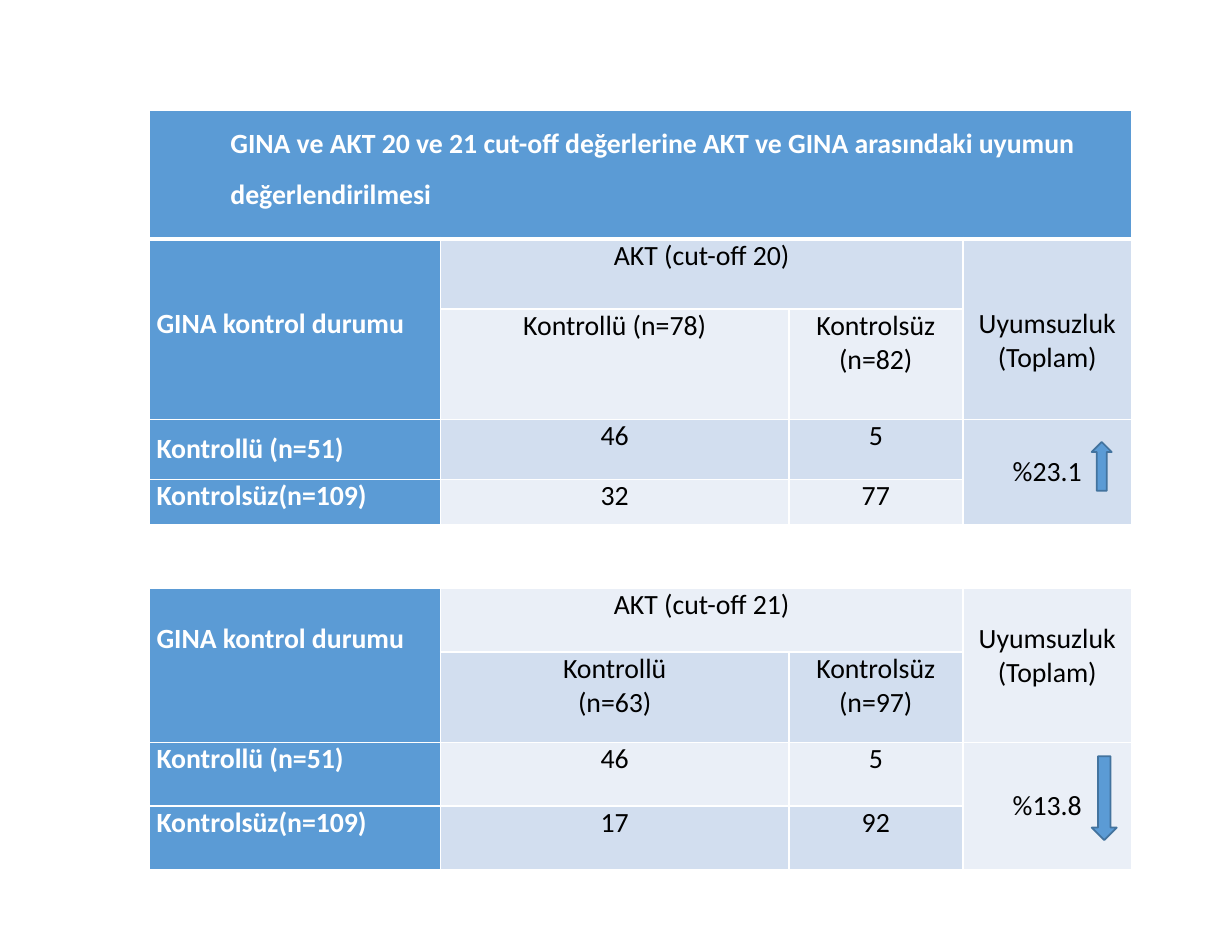
from dataclasses import dataclass

from lxml.etree import SubElement
from pptx import Presentation
from pptx.dml.color import RGBColor
from pptx.enum.shapes import MSO_SHAPE as Preset
from pptx.enum.text import MSO_ANCHOR as Anchor, PP_ALIGN as Align
from pptx.oxml.ns import qn
from pptx.util import Emu, Pt

PX = 9144
BLUE, EDGE, WHITE, BLACK = "5B9BD5", "43739E", "FFFFFF", "000000"
BANDS = ("EAEFF7", "D2DEEF")
COLUMNS = (233, 278, 139, 135)
ROWS = (103, 56, 88, 48, 36, 51, 51, 72, 51, 51)
GAP_ROW = 5
BLANK_LINE = 27


@dataclass(frozen=True)
class Entry:
    row: int
    column: int
    text: str
    rows: int = 1
    columns: int = 1
    top: int = 0
    middle: bool = False


@dataclass(frozen=True)
class Section:
    row: int
    cutoff: int
    controlled: str
    uncontrolled: str
    values: tuple[tuple[str, str], tuple[str, str]]
    mismatch: str
    blank_lines: int
    middle: bool


@dataclass(frozen=True)
class Arrow:
    preset: Preset
    left: int
    top: int
    width: int
    height: int


SECTIONS = (
    Section(1, 20, "Kontrollü (n=78)", "Kontrolsüz\n(n=82)",
            (("46", "5"), ("32", "77")), "%23.1", 2, True),
    Section(6, 21, "Kontrollü\n(n=63)", "Kontrolsüz\n(n=97)",
            (("46", "5"), ("17", "92")), "%13.8", 1, False),
)
ARROWS = (
    Arrow(Preset.DOWN_ARROW, 872, 604, 20, 67),
    Arrow(Preset.UP_ARROW, 872, 353, 16, 39),
)


def px(length: int) -> Emu:
    return Emu(length * PX)


def color(value: str) -> RGBColor:
    return RGBColor.from_string(value)


def write(frame, text: str, *, ink: str, bold: bool = False,
          align: Align = Align.LEFT, spacing: float = 1.0) -> None:
    for index, line in enumerate(text.split("\n")):
        paragraph = frame.add_paragraph() if index else frame.paragraphs[0]
        paragraph.alignment = align
        paragraph.line_spacing = spacing
        run = paragraph.add_run()
        run.text = line
        run.font.name = "Calibri"
        run.font.size = Pt(16)
        run.font.bold = bold
        run.font.color.rgb = color(ink)


def set_borders(cell, top: int, bottom: int) -> None:
    properties = cell._tc.get_or_add_tcPr()
    widths = (("lnL", 1), ("lnR", 1), ("lnT", top), ("lnB", bottom))
    for name, width in widths:
        line = SubElement(properties, qn(f"a:{name}"), w=str(Pt(width)))
        fill = SubElement(line, qn("a:solidFill"))
        SubElement(fill, qn("a:srgbClr"), val=WHITE)


def cell_fill(row: int, column: int) -> str:
    if row == GAP_ROW:
        return WHITE
    return BLUE if row == 0 or column == 0 else BANDS[row % 2]


def section_entries(section: Section) -> list[Entry]:
    row, top = section.row, section.blank_lines * BLANK_LINE
    entries = [
        Entry(row, 0, "GINA kontrol durumu", rows=2, top=top),
        Entry(row, 1, f"AKT (cut-off {section.cutoff})", columns=2),
        Entry(row, 3, "Uyumsuzluk (Toplam)", rows=2, top=top),
        Entry(row + 1, 1, section.controlled),
        Entry(row + 1, 2, section.uncontrolled),
        Entry(row + 2, 0, "Kontrollü (n=51)", middle=section.middle),
        Entry(row + 2, 3, section.mismatch, rows=2, middle=True),
        Entry(row + 3, 0, "Kontrolsüz(n=109)"),
    ]
    for down, pair in enumerate(section.values, row + 2):
        entries += [Entry(down, column, value) for column, value in enumerate(pair, 1)]
    return entries


def merge(table, row: int, column: int, rows: int, columns: int) -> None:
    if rows * columns > 1:
        table.cell(row, column).merge(table.cell(row + rows - 1, column + columns - 1))


def fill_entry(table, entry: Entry) -> None:
    merge(table, entry.row, entry.column, entry.rows, entry.columns)
    cell = table.cell(entry.row, entry.column)
    cell.margin_top = px(entry.top)
    cell.vertical_anchor = Anchor.MIDDLE if entry.middle else Anchor.TOP
    label = entry.column == 0
    write(cell.text_frame, entry.text, ink=WHITE if label else BLACK, bold=label,
          align=Align.LEFT if label else Align.CENTER)


def add_agreement_table(slide) -> None:
    table = slide.shapes.add_table(len(ROWS), len(COLUMNS), px(119), px(88),
                                   px(sum(COLUMNS)), px(sum(ROWS))).table
    table.horz_banding = False
    for column, width in zip(table.columns, COLUMNS):
        column.width = px(width)
    for row_index, height in enumerate(ROWS):
        table.rows[row_index].height = px(height)
        for column_index in range(len(COLUMNS)):
            cell = table.cell(row_index, column_index)
            cell.margin_left = cell.margin_right = px(6)
            cell.margin_top = cell.margin_bottom = 0
            set_borders(cell, top=3 if row_index == 1 else 1,
                        bottom=3 if row_index == 0 else 1)
            cell.fill.solid()
            cell.fill.fore_color.rgb = color(cell_fill(row_index, column_index))
    for row_index in (0, GAP_ROW):
        merge(table, row_index, 0, 1, len(COLUMNS))
    title = table.cell(0, 0)
    title.margin_left = px(65)
    write(title.text_frame,
          "GINA ve AKT 20 ve 21 cut-off değerlerine AKT ve GINA arasındaki uyumun\n"
          "değerlendirilmesi",
          ink=WHITE, bold=True, align=Align.JUSTIFY, spacing=1.5)
    for section in SECTIONS:
        for entry in section_entries(section):
            fill_entry(table, entry)


def add_arrow(slide, arrow: Arrow) -> None:
    shape = slide.shapes.add_shape(arrow.preset, px(arrow.left), px(arrow.top),
                                   px(arrow.width), px(arrow.height))
    shape.shadow.inherit = False
    shape.fill.solid()
    shape.fill.fore_color.rgb = color(BLUE)
    shape.line.color.rgb = color(EDGE)
    shape.line.width = Pt(1)


def main() -> None:
    presentation = Presentation()
    presentation.slide_width, presentation.slide_height = px(984), px(750)
    slide = presentation.slides.add_slide(presentation.slide_layouts[6])
    add_agreement_table(slide)
    for arrow in ARROWS:
        add_arrow(slide, arrow)
    presentation.save("out.pptx")


if __name__ == "__main__":
    main()
